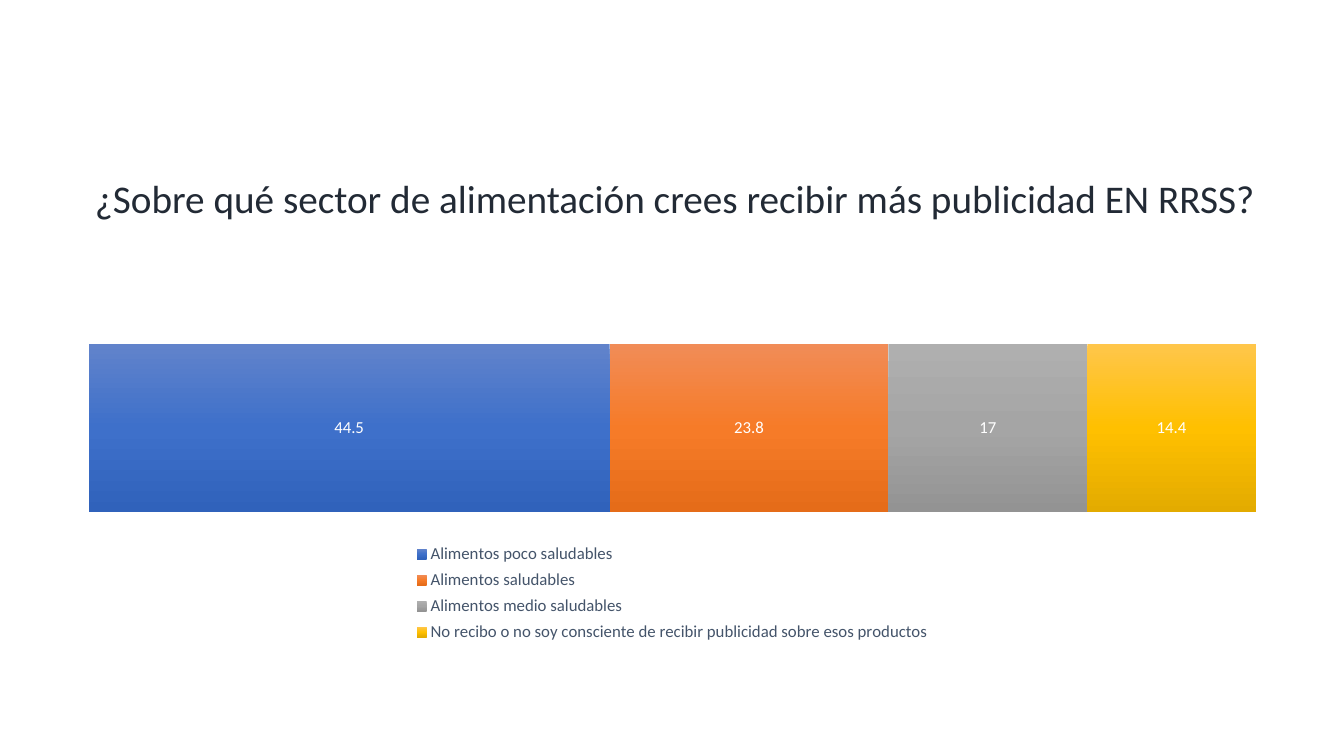
"""Build a slide with one stacked bar about food advertising on social media."""
from pptx import Presentation
from pptx.chart.data import CategoryChartData
from pptx.dml.color import RGBColor
from pptx.enum import chart as chart_enum, text
from pptx.oxml import ns, parse_xml
from pptx.util import Pt

FONT = "Calibri"
TITLE_COLOR = RGBColor(0x22, 0x2A, 0x35)
LEGEND_COLOR = RGBColor(0x44, 0x54, 0x6A)
WHITE = RGBColor(0xFF, 0xFF, 0xFF)
BLACK = RGBColor(0, 0, 0)
BLUES = (RGBColor(0x61, 0x83, 0xCB), RGBColor(0x3E, 0x70, 0xCA), RGBColor(0x30, 0x62, 0xBB))
ORANGES = (RGBColor(0xF1, 0x8C, 0x57), RGBColor(0xF6, 0x7B, 0x28), RGBColor(0xE5, 0x6C, 0x19))
GRAYS = (RGBColor(0xAF, 0xAF, 0xAF), RGBColor(0xA5, 0xA5, 0xA5), RGBColor(0x93, 0x93, 0x93))
YELLOWS = (RGBColor(0xFF, 0xC6, 0x4B), RGBColor(0xFF, 0xC0, 0x00), RGBColor(0xE3, 0xAB, 0x00))

TITLE = "¿Sobre qué sector de alimentación crees recibir más publicidad EN RRSS?"
ANSWERS = [
    ("Alimentos poco saludables", 44.5, BLUES),
    ("Alimentos saludables", 23.8, ORANGES),
    ("Alimentos medio saludables", 17, GRAYS),
    ("No recibo o no soy consciente de recibir publicidad sobre esos productos", 14.4, YELLOWS),
]
TITLE_BOX = (60.5, 124.5, 868.5, 93.5)
CHART_BOX = (46, 148.5, 868.5, 342)
PLOT_LAYOUT = (0.02, 0.02, 0.96, 0.88)
LEGEND_LAYOUT = (0.28, 0.69, 0.44, 0.23)


def layout_xml(fractions, inner=False):
    """Return a manual chart layout for left, top, width and height fractions."""
    target = '<c:layoutTarget val="inner"/>' if inner else ""
    modes = '<c:xMode val="edge"/><c:yMode val="edge"/>'
    sizes = "".join(f'<c:{name} val="{value}"/>' for name, value in zip("xywh", fractions))
    return parse_xml(f'<c:layout {ns.nsdecls("c")}><c:manualLayout>{target}{modes}{sizes}'
                     '</c:manualLayout></c:layout>')


def gradient_xml(colors):
    """Return a top-to-bottom gradient with evenly spaced stops."""
    step = 100000 // (len(colors) - 1)
    stops = "".join(f'<a:gs pos="{index * step}"><a:srgbClr val="{color}"/></a:gs>'
                    for index, color in enumerate(colors))
    return parse_xml(f'<a:gradFill {ns.nsdecls("a")} rotWithShape="1"><a:gsLst>{stops}</a:gsLst>'
                     '<a:lin ang="5400000" scaled="0"/></a:gradFill>')


def set_font(font, size, color):
    """Apply the slide font with a size and colour."""
    font.name, font.size, font.color.rgb = FONT, Pt(size), color


def add_title(slide):
    """Place the question in the title placeholder."""
    title = slide.shapes.title
    title.left, title.top, title.width, title.height = map(Pt, TITLE_BOX)
    frame = title.text_frame
    frame.text = TITLE
    frame.word_wrap = True
    frame.auto_size = text.MSO_AUTO_SIZE.NONE
    frame.vertical_anchor = text.MSO_ANCHOR.TOP
    paragraph = frame.paragraphs[0]
    paragraph.alignment = text.PP_ALIGN.LEFT
    paragraph.line_spacing = 0.9
    set_font(paragraph.font, 28, TITLE_COLOR)


def add_answers_chart(slide):
    """Draw the answers as one full-width stacked bar."""
    data = CategoryChartData()
    data.categories = ["1"]
    for name, value, _ in ANSWERS:
        data.add_series(name, [value])
    chart = slide.shapes.add_chart(
        chart_enum.XL_CHART_TYPE.BAR_STACKED_100, *map(Pt, CHART_BOX), data).chart
    set_font(chart.font, 10, BLACK)
    chart.has_title = False
    chart.category_axis.visible = False
    chart.value_axis.visible = False
    chart.value_axis.has_major_gridlines = False

    plot = chart.plots[0]
    plot.gap_width, plot.overlap, plot.vary_by_categories = 150, 100, False
    for series, (_, _, colors) in zip(plot.series, ANSWERS):
        series._element.get_or_add_spPr().insert(0, gradient_xml(colors))
        labels = series.data_labels
        labels.show_value = True
        set_font(labels.font, 12, WHITE)

    chart.has_legend = True
    legend = chart.legend
    legend.position = chart_enum.XL_LEGEND_POSITION.BOTTOM
    legend.include_in_layout = False
    set_font(legend.font, 12, LEGEND_COLOR)

    plot_area = chart._chartSpace.chart.plotArea
    for layout in plot_area.findall(ns.qn("c:layout")):
        plot_area.remove(layout)
    plot_area.insert(0, layout_xml(PLOT_LAYOUT, inner=True))
    legend_element = legend._element
    for layout in legend_element.findall(ns.qn("c:layout")):
        legend_element.remove(layout)
    legend_element.find(ns.qn("c:legendPos")).addnext(layout_xml(LEGEND_LAYOUT))


def main():
    """Build and save the presentation."""
    presentation = Presentation()
    presentation.slide_width, presentation.slide_height = Pt(960), Pt(540)
    slide = presentation.slides.add_slide(presentation.slide_layouts[5])
    add_answers_chart(slide)
    add_title(slide)
    presentation.save("out.pptx")


if __name__ == "__main__":
    main()
